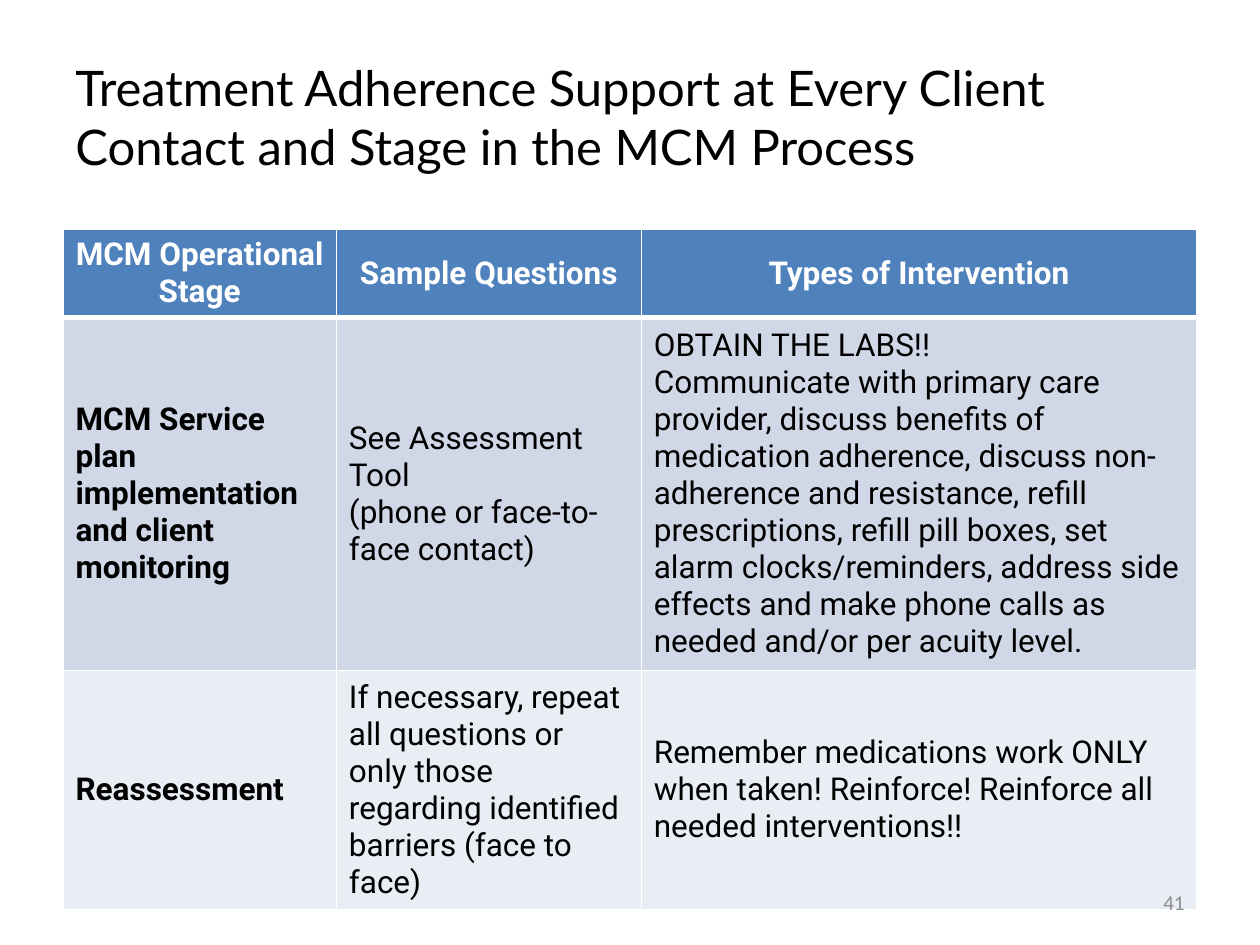
from dataclasses import dataclass

from lxml.etree import SubElement
from pptx import Presentation
from pptx.dml.color import RGBColor
from pptx.enum.text import MSO_ANCHOR, PP_ALIGN
from pptx.oxml.ns import qn
from pptx.util import Inches, Pt


@dataclass(frozen=True)
class Theme:
    title_font: str = "Lato"
    table_font: str = "Roboto"
    number_font: str = "Calibri"
    title_size: int = 28
    table_size: int = 18
    number_size: int = 12
    ink: str = "000000"
    white: str = "FFFFFF"
    grey: str = "8C8C8C"
    header: str = "4F81BD"
    bands: tuple = ("D0D8E8", "E9EDF4")
    thin: int = 1
    thick: int = 3


THEME = Theme()
WIDTH, HEIGHT = Inches(10), Inches(7.5)
MARGIN = 0.05
COLUMNS = (2.17, 2.42, 4.41)
ROWS = (0.7, 2.75, 1.6)
HEADINGS = ("MCM Operational Stage", "Sample Questions", "Types of Intervention")
STAGES = (
    (
        "MCM Service plan implementation and client monitoring",
        "See Assessment Tool\n(phone or face-to-face contact)",
        "OBTAIN THE LABS!!\nCommunicate with primary care provider, discuss "
        "benefits of medication adherence, discuss non-adherence and resistance, "
        "refill prescriptions, refill pill boxes, set alarm clocks/reminders, "
        "address side effects and make phone calls as needed and/or per acuity level.",
    ),
    (
        "Reassessment",
        "If necessary, repeat all questions or only those regarding identified "
        "barriers (face to face)",
        "Remember medications work ONLY when taken! Reinforce! Reinforce all "
        "needed interventions!!",
    ),
)


def write(tf, text, font, size, color, bold=False, align=PP_ALIGN.LEFT):
    tf.word_wrap = True
    tf.text = text
    for p in tf.paragraphs:
        p.alignment = align
        p.font.name = font
        p.font.size = Pt(size)
        p.font.bold = bold
        p.font.color.rgb = RGBColor.from_string(color)


def add_text(slide, x, y, w, h, *args, **kwargs):
    box = slide.shapes.add_textbox(
        int(x * WIDTH), int(y * HEIGHT), int(w * WIDTH), int(h * HEIGHT)
    )
    box.text_frame.vertical_anchor = MSO_ANCHOR.MIDDLE
    write(box.text_frame, *args, **kwargs)


def set_borders(cell, top, bottom):
    tcPr = cell._tc.get_or_add_tcPr()
    sides = {"a:lnL": THEME.thin, "a:lnR": THEME.thin, "a:lnT": top, "a:lnB": bottom}
    for tag, width in sides.items():
        ln = SubElement(tcPr, qn(tag), w=str(Pt(width)))
        fill = SubElement(ln, qn("a:solidFill"))
        SubElement(fill, qn("a:srgbClr"), val=THEME.white)


def fill_cell(cell, text, row, col):
    is_header = row == 0
    set_borders(
        cell,
        top=THEME.thick if row == 1 else THEME.thin,
        bottom=THEME.thick if is_header else THEME.thin,
    )
    cell.fill.solid()
    color = THEME.header if is_header else THEME.bands[(row - 1) % 2]
    cell.fill.fore_color.rgb = RGBColor.from_string(color)
    cell.vertical_anchor = MSO_ANCHOR.MIDDLE
    write(
        cell.text_frame, text, THEME.table_font, THEME.table_size,
        THEME.white if is_header else THEME.ink,
        bold=is_header or col == 0,
        align=PP_ALIGN.CENTER if is_header else PP_ALIGN.LEFT,
    )


def add_stage_table(slide):
    table = slide.shapes.add_table(
        len(ROWS), len(COLUMNS), int(MARGIN * WIDTH), Inches(1.82),
        Inches(sum(COLUMNS)), Inches(sum(ROWS)),
    ).table
    for column, width in zip(table.columns, COLUMNS):
        column.width = Inches(width)
    for row, height in zip(table.rows, ROWS):
        row.height = Inches(height)
    for r, texts in enumerate((HEADINGS, *STAGES)):
        for c, text in enumerate(texts):
            fill_cell(table.cell(r, c), text, r, c)


def main():
    prs = Presentation()
    prs.slide_width, prs.slide_height = WIDTH, HEIGHT
    slide = prs.slides.add_slide(prs.slide_layouts[6])
    add_text(
        slide, MARGIN, 0.04, 1 - 2 * MARGIN, 1 / 6,
        "Treatment Adherence Support at Every Client Contact and Stage in the MCM Process",
        THEME.title_font, THEME.title_size, THEME.ink,
    )
    add_stage_table(slide)
    number_width = 0.23
    add_text(
        slide, 1 - MARGIN - number_width, 0.93, number_width, 0.05, "41",
        THEME.number_font, THEME.number_size, THEME.grey, align=PP_ALIGN.RIGHT,
    )
    prs.save("out.pptx")


if __name__ == "__main__":
    main()
